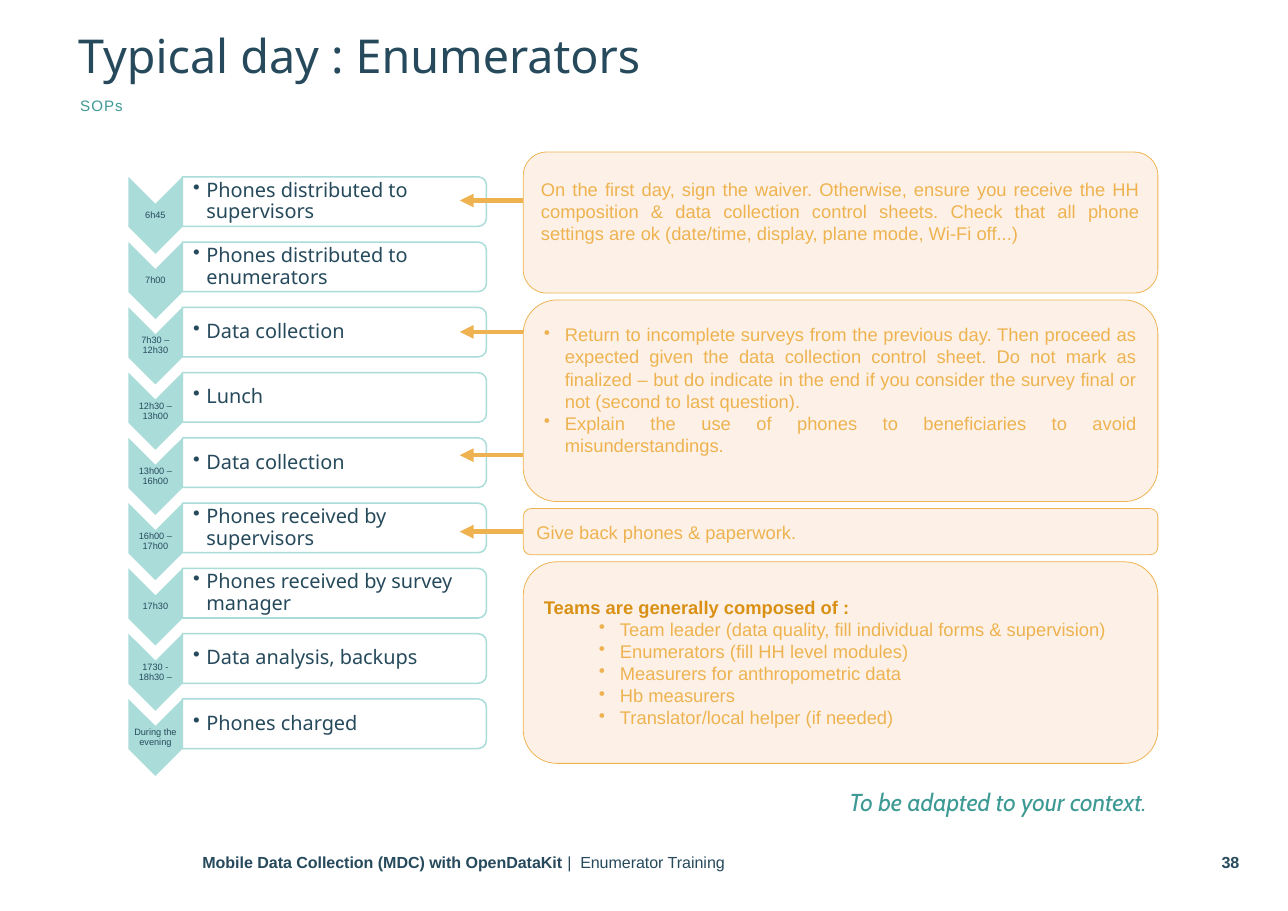
import collections

import pptx
import pptx.dml.color
import pptx.enum.dml
import pptx.enum.shapes
import pptx.enum.text
import pptx.oxml.ns
import pptx.oxml.xmlchemy
import pptx.util
from lxml import etree

RGBColor = pptx.dml.color.RGBColor
SHAPE = pptx.enum.shapes.MSO_SHAPE
ALIGN = pptx.enum.text.PP_ALIGN
ANCHOR = pptx.enum.text.MSO_ANCHOR
Inches = pptx.util.Inches
Pt = pptx.util.Pt
qn = pptx.oxml.ns.qn

NAVY = RGBColor(0x26, 0x4A, 0x5C)
TEAL = RGBColor(0x3D, 0x99, 0x94)
MINT = RGBColor(0xAA, 0xDD, 0xDA)
WHITE = RGBColor(0xFF, 0xFF, 0xFF)
AMBER = RGBColor(0xEE, 0xB3, 0x50)
DARK_AMBER = RGBColor(0xD9, 0x90, 0x15)
CREAM = RGBColor(0xFD, 0xF1, 0xE7)

Box = collections.namedtuple("Box", "left top width height")
Note = collections.namedtuple("Note", "height arrows lines bullet_indents spare_line")

STEPS = [
    ("6h45", "Phones distributed to supervisors"),
    ("7h00", "Phones distributed to enumerators"),
    ("7h30 – 12h30", "Data collection"),
    ("12h30 – 13h00", "Lunch"),
    ("13h00 – 16h00", "Data collection"),
    ("16h00 – 17h00", "Phones received by supervisors"),
    ("17h30", "Phones received by survey manager"),
    ("1730 - 18h30 –", "Data analysis, backups"),
    ("During the evening", "Phones charged"),
]

# Heights are percentages of the column, arrow positions percentages of the note
NOTES = [
    Note(23.06, [34.4], [
        "On the first day, sign the waiver. Otherwise, ensure you receive the HH "
        "composition & data collection control sheets. Check that all phone settings "
        "are ok (date/time, display, plane mode, Wi-Fi off...)"], [None], True),
    Note(32.97, [15.8, 77], [
        "Return to incomplete surveys from the previous day. Then proceed as expected "
        "given the data collection control sheet. Do not mark as finalized – but do "
        "indicate in the end if you consider the survey final or not (second to last "
        "question).",
        "Explain the use of phones to beneficiaries to avoid misunderstandings."],
        [0.19, 0.19], True),
    Note(7.57, [50], ["Give back phones & paperwork."], [None], False),
    Note(32.97, [], [
        "Teams are generally composed of :",
        "Team leader (data quality, fill individual forms & supervision)",
        "Enumerators (fill HH level modules)",
        "Measurers for anthropometric data",
        "Hb measurers",
        "Translator/local helper (if needed)"], [None] + [0.69] * 5, False),
]


def part(box, left, top, width, height):
    """Return the part of a box given in percentages of its size."""
    return Box(int(box.left + box.width * left / 100), int(box.top + box.height * top / 100),
               int(box.width * width / 100), int(box.height * height / 100))


def set_frame(text_frame, anchor, insets):
    text_frame.word_wrap = True
    text_frame.auto_size = pptx.enum.text.MSO_AUTO_SIZE.NONE
    text_frame.vertical_anchor = anchor
    (text_frame.margin_left, text_frame.margin_top,
     text_frame.margin_right, text_frame.margin_bottom) = map(Inches, insets)


def set_paragraph(paragraph, text, size, color, name="Arial", align=ALIGN.LEFT, spacing=1.0):
    paragraph.text = text
    paragraph.alignment = align
    paragraph.line_spacing = spacing
    font = paragraph.runs[0].font
    font.size, font.name, font.color.rgb = Pt(size), name, color
    return font


def add_bullet(paragraph, margin, hanging):
    properties = paragraph._p.get_or_add_pPr()
    properties.set("marL", str(Inches(margin)))
    properties.set("indent", str(-Inches(hanging)))
    etree.SubElement(properties, qn("a:buChar")).set("char", "•")


def add_text(slide, box, text, size, color, anchor=ANCHOR.TOP, insets=(0, 0, 0, 0), **style):
    text_frame = slide.shapes.add_textbox(*box).text_frame
    set_frame(text_frame, anchor, insets)
    font = set_paragraph(text_frame.paragraphs[0], text, size, color, **style)
    return text_frame.paragraphs[0], font


def add_filled(slide, kind, box, fill, line=None, line_width=1):
    shape = slide.shapes.add_shape(kind, *box)
    shape.shadow.inherit = False
    shape.fill.solid()
    shape.fill.fore_color.rgb = fill
    if line is None:
        shape.line.fill.background()
    else:
        shape.line.color.rgb = line
        shape.line.width = Pt(line_width)
    return shape


def add_quarter_turned(slide, kind, box, *style):
    """Add a shape that fills the box after a turn of 90 degrees."""
    shift = (box.width - box.height) // 2
    turned = Box(box.left + shift, box.top - shift, box.height, box.width)
    add_filled(slide, kind, turned, *style).rotation = 90


def add_heading(slide, box):
    title = slide.shapes.title
    title.left, title.top, title.width, title.height = part(box, 5.39, 2.66, 90.68, 7.26)
    set_frame(title.text_frame, ANCHOR.TOP, [0.08] * 4)
    set_paragraph(title.text_frame.paragraphs[0], "Typical day : Enumerators", 30.5, NAVY,
                  name="Noto Sans", spacing=0.9)
    _, font = add_text(slide, part(box, 5.39, 9.19, 53.89, 3.99), "SOPs", 9.9, TEAL,
                       insets=(0.1, 0.08, 0.08, 0.08), spacing=1.2)
    font._element.set("spc", "70")


def add_schedule(slide, box):
    row_height = 12.87
    row_step = (100 - row_height) / (len(STEPS) - 1)
    for index, (time, task) in enumerate(STEPS):
        row = part(box, 0, index * row_step, 100, row_height)
        # Time chevron
        add_quarter_turned(slide, SHAPE.CHEVRON, part(row, 0, 0, 15.08, 100), MINT)
        add_text(slide, part(row, 0, 35, 15.08, 30), time, 6, NAVY, ANCHOR.MIDDLE,
                 align=ALIGN.CENTER, spacing=0.9)
        # Task panel
        panel = part(row, 15.08, 0, 84.92, 64.29)
        add_quarter_turned(slide, SHAPE.ROUND_2_SAME_RECTANGLE, panel, WHITE, MINT)
        paragraph, _ = add_text(slide, panel, task, 13, NAVY, ANCHOR.MIDDLE,
                                (0.1, 0.01, 0.03, 0.01), name="Noto Sans", spacing=0.9)
        add_bullet(paragraph, 0.12, 0.12)


def add_arrow(slide, note_shape, position):
    """Point from the left side of a note to the schedule."""
    left = note_shape.left
    y = int(note_shape.top + note_shape.height * position / 100)
    tip = int(left - note_shape.width * 0.1)
    arrow = slide.shapes.add_connector(pptx.enum.shapes.MSO_CONNECTOR.STRAIGHT, left, y, tip, y)
    if position == 50:
        arrow.begin_connect(note_shape, 1)
    arrow.line.color.rgb = AMBER
    arrow.line.width = Pt(3)
    properties = arrow._element.spPr
    etree.SubElement(properties.find(qn("a:ln")), qn("a:tailEnd")).set("type", "triangle")
    etree.SubElement(properties, qn("a:effectLst"))


def add_notes(slide, box):
    gap = (100 - sum(note.height for note in NOTES)) / (len(NOTES) - 1)
    top = 0
    for note in NOTES:
        shape = add_filled(slide, SHAPE.ROUNDED_RECTANGLE, part(box, 0, top, 100, note.height),
                           CREAM, AMBER, 0.5)
        text_frame = shape.text_frame
        set_frame(text_frame, ANCHOR.MIDDLE, (0.1, 0.05, 0.1, 0.25 if note.spare_line else 0.05))
        text_frame.text = "\n".join(note.lines)
        for paragraph, line, indent in zip(text_frame.paragraphs, note.lines, note.bullet_indents):
            font = set_paragraph(paragraph, line, 12, AMBER, align=ALIGN.JUSTIFY)
            if indent:
                add_bullet(paragraph, indent, 0.19)
            elif len(note.lines) > 1:
                font.bold = True
                font.color.rgb = DARK_AMBER
        for position in note.arrows:
            add_arrow(slide, shape, position)
        top += note.height + gap


def add_footer(slide, box):
    paragraph, font = add_text(slide, part(box, 0, 0, 86, 100),
                               "Mobile Data Collection (MDC) with OpenDataKit ", 10.5, NAVY,
                               ANCHOR.MIDDLE, (0.1, 0.05, 0.1, 0.05))
    font.bold = True
    run = paragraph.add_run()
    run.text = "|  Enumerator Training"
    run.font.size, run.font.name, run.font.color.rgb = Pt(10.5), "Arial", NAVY
    _, font = add_text(slide, part(box, 86, 0, 14, 100), "38", 10.5, NAVY, ANCHOR.MIDDLE,
                       (0.1, 0.05, 0, 0.05), align=ALIGN.RIGHT)
    font.bold = True


def main():
    presentation = pptx.Presentation()
    presentation.slide_width = Inches(11.69)
    presentation.slide_height = Inches(8.27)
    slide = presentation.slides.add_slide(presentation.slide_layouts[5])
    page = Box(0, 0, presentation.slide_width, presentation.slide_height)

    add_heading(slide, page)
    add_schedule(slide, part(page, 9.97, 19.41, 27.8, 65.78))
    add_notes(slide, part(page, 40.63, 16.69, 49.27, 67.11))
    _, font = add_text(slide, part(page, 65.95, 86.09, 23.95, 3.39),
                       "To be adapted to your context.", 16, TEAL, name="Cabin", spacing=1.1)
    font.italic = True
    add_footer(slide, part(page, 14.88, 92.02, 81.35, 5.32))
    presentation.save("out.pptx")


if __name__ == "__main__":
    main()
